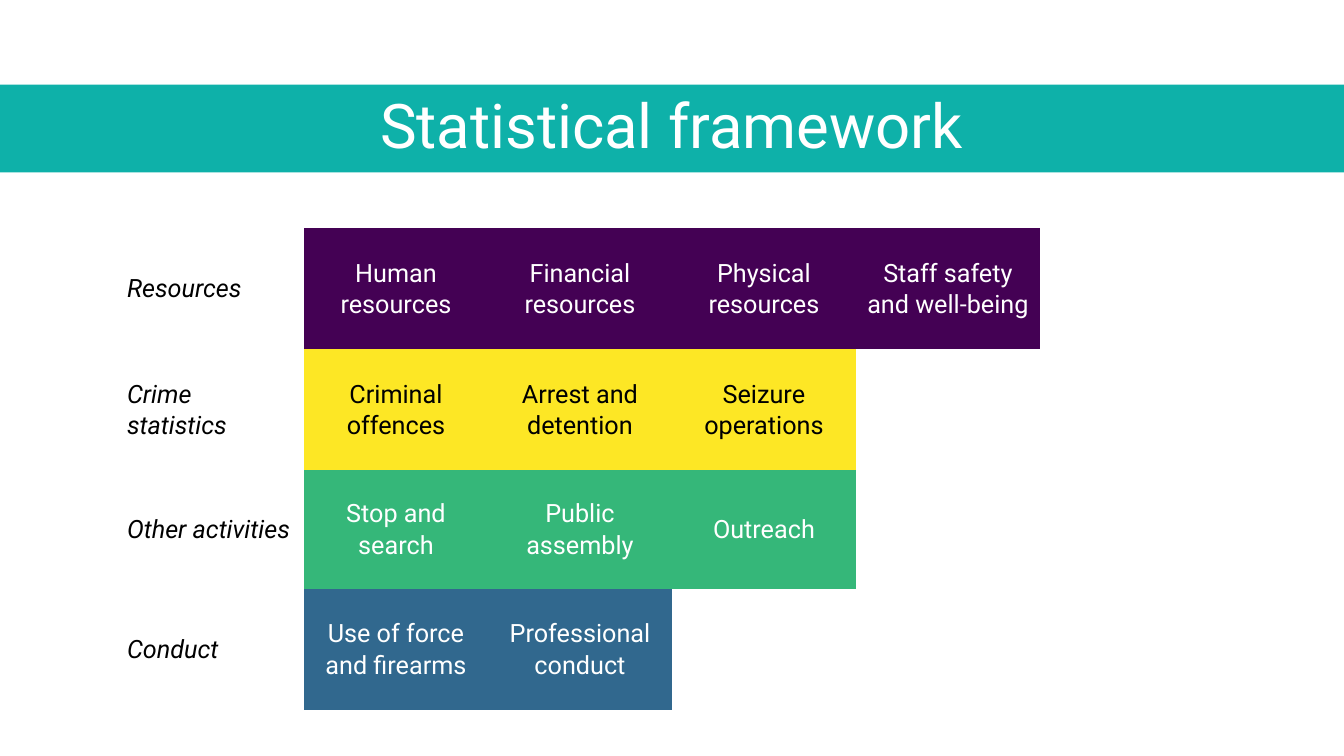
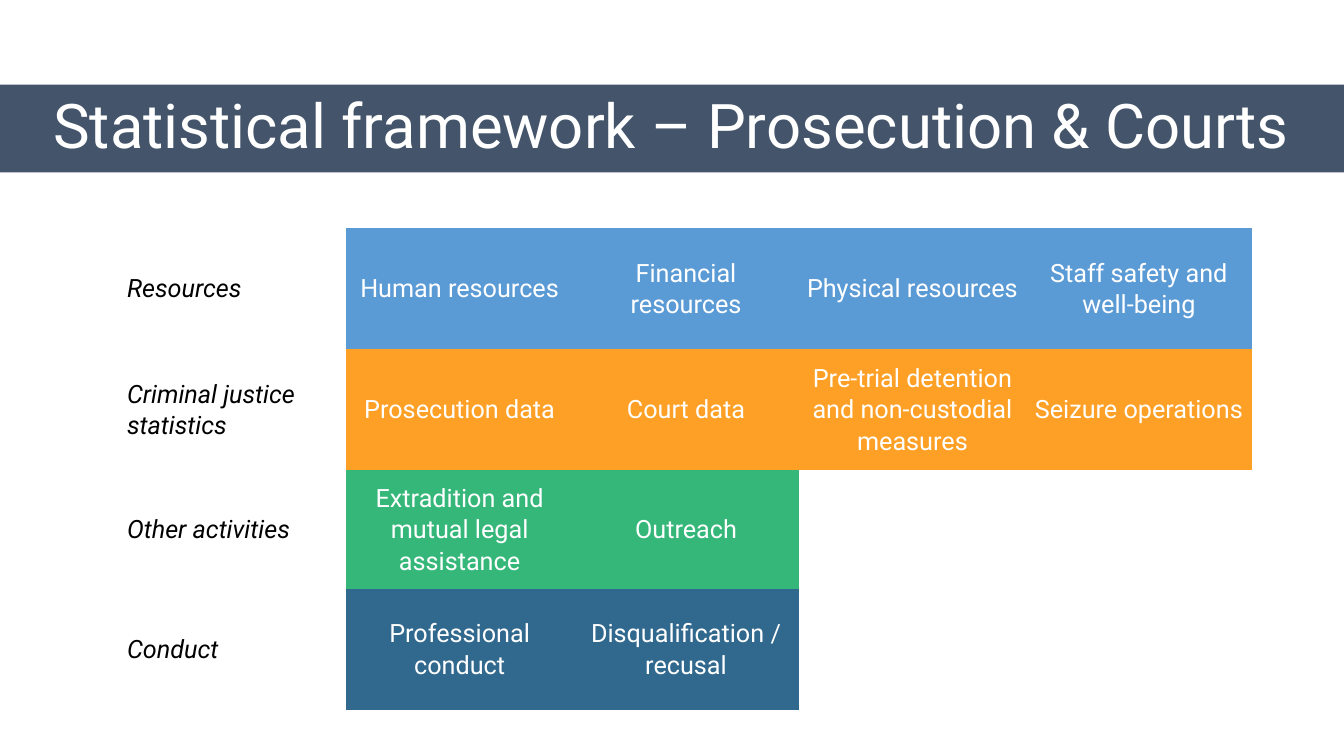
"""Build two slides that map the statistical frameworks as coloured grids."""
from pptx import Presentation
from pptx.dml.color import RGBColor
from pptx.enum.text import MSO_ANCHOR, MSO_AUTO_SIZE, PP_ALIGN
from pptx.oxml.ns import qn
from pptx.util import Inches, Pt

COLORS = {
    "white": "FFFFFF",
    "black": "000000",
    "teal": "0EB1A9",
    "slate": "44546A",
    "purple": "440154",
    "yellow": "FDE725",
    "green": "35B779",
    "navy": "31688E",
    "blue": "5B9BD5",
    "orange": "FDA025",
}
FONT = "Roboto"
SLIDE_WIDTH, SLIDE_HEIGHT = 13.33, 7.5
ROW_HEIGHTS = (1.2, 1.2, 1.18, 1.2)
NO_GRID_STYLE = "{2D5ABB26-0587-4C30-8999-92F81FD0307C}"

POLICE_ROWS = [
    ("Resources", "purple", "white",
     ["Human resources", "Financial resources", "Physical resources",
      "Staff safety and well-being"]),
    ("Crime statistics", "yellow", "black",
     ["Criminal offences", "Arrest and detention", "Seizure operations"]),
    ("Other activities", "green", "white",
     ["Stop and search", "Public assembly", "Outreach"]),
    ("Conduct", "navy", "white",
     ["Use of force and firearms", "Professional conduct"]),
]
COURT_ROWS = [
    ("Resources", "blue", "white",
     ["Human resources", "Financial resources", "Physical resources",
      "Staff safety and well-being"]),
    ("Criminal justice statistics", "orange", "white",
     ["Prosecution data", "Court data",
      "Pre-trial detention and non-custodial measures", "Seizure operations"]),
    ("Other activities", "green", "white",
     ["Extradition and mutual legal assistance", "Outreach"]),
    ("Conduct", "navy", "white",
     ["Professional conduct", "Disqualification / recusal"]),
]


class Deck:
    """Hold the shared style and the current slide."""

    def __init__(self):
        self.presentation = Presentation()
        self.presentation.slide_width = Inches(SLIDE_WIDTH)
        self.presentation.slide_height = Inches(SLIDE_HEIGHT)
        self.slide = None

    def color(self, name):
        """Return the named colour."""
        return RGBColor.from_string(COLORS[name])

    def style(self, paragraph, size, color, align, spacing, italic=False):
        """Format a whole paragraph."""
        paragraph.alignment = align
        paragraph.line_spacing = spacing
        paragraph.font.name = FONT
        paragraph.font.size = Pt(size)
        paragraph.font.italic = italic
        paragraph.font.color.rgb = self.color(color)

    def add_slide(self, title, band_color):
        """Start a slide whose title fills a full-width band."""
        layout = self.presentation.slide_layouts.get_by_name("Title Only")
        self.slide = self.presentation.slides.add_slide(layout)
        band = self.slide.shapes.title
        band.left, band.top = Inches(0), Inches(0.84)
        band.width, band.height = Inches(SLIDE_WIDTH), Inches(0.87)
        band.fill.solid()
        band.fill.fore_color.rgb = self.color(band_color)
        frame = band.text_frame
        frame.text = title
        frame.word_wrap = True
        frame.auto_size = MSO_AUTO_SIZE.NONE
        frame.vertical_anchor = MSO_ANCHOR.MIDDLE
        self.style(frame.paragraphs[0], 44, "white", PP_ALIGN.CENTER, 0.9)

    def fill_cell(self, cell, text, color, align, italic=False):
        """Write one table cell."""
        cell.text = text
        cell.vertical_anchor = MSO_ANCHOR.MIDDLE
        cell.margin_left = cell.margin_right = Inches(0.07)
        cell.margin_top = cell.margin_bottom = 0
        self.style(cell.text_frame.paragraphs[0], 18, color, align, 1.07, italic)

    def add_framework(self, rows, column_count, width):
        """Add a borderless table with a label and coloured cells per row."""
        graphic_frame = self.slide.shapes.add_table(
            len(rows), column_count, Inches(1.19), Inches(2.26),
            Inches(width), Inches(sum(ROW_HEIGHTS)))
        table = graphic_frame.table
        table.first_row = table.horz_banding = False
        for style_id in graphic_frame.element.iter(qn("a:tableStyleId")):
            style_id.text = NO_GRID_STYLE
        for column in table.columns:
            column.width = Inches(width / column_count)
        for table_row, height, row in zip(table.rows, ROW_HEIGHTS, rows):
            label, fill, text_color, topics = row
            table_row.height = Inches(height)
            cells = list(table_row.cells)
            for cell in cells:
                cell.fill.background()
            self.fill_cell(cells[0], label, "black", PP_ALIGN.LEFT, italic=True)
            for cell, topic in zip(cells[1:], topics):
                cell.fill.solid()
                cell.fill.fore_color.rgb = self.color(fill)
                self.fill_cell(cell, topic, text_color, PP_ALIGN.CENTER)


def main():
    """Build and save the presentation."""
    deck = Deck()
    deck.add_slide("Statistical framework", "teal")
    deck.add_framework(POLICE_ROWS, 6, 10.95)
    deck.add_slide("Statistical framework – Prosecution & Courts", "slate")
    deck.add_framework(COURT_ROWS, 5, 11.23)
    deck.presentation.save("out.pptx")


if __name__ == "__main__":
    main()
